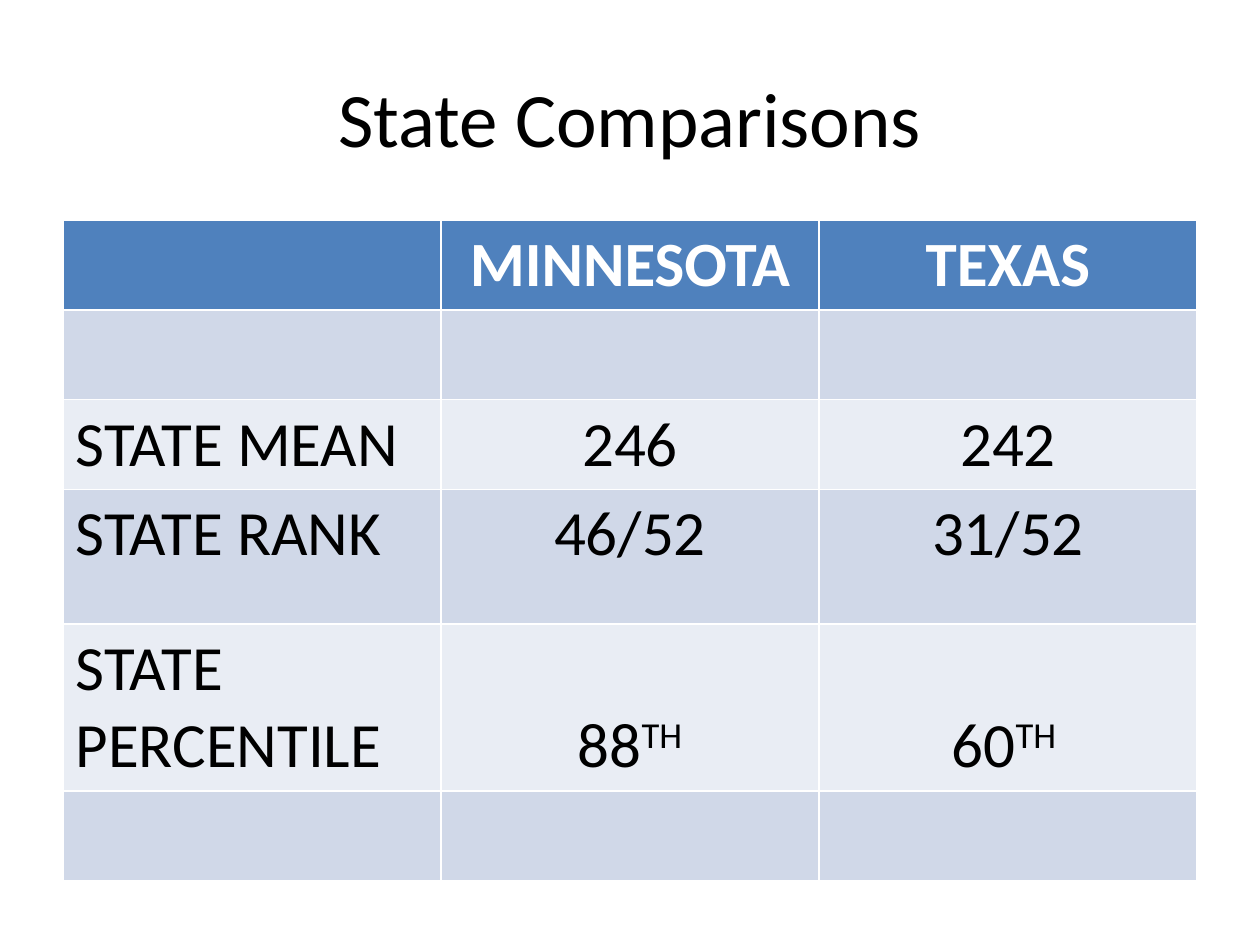
import dataclasses

import pptx
import pptx.dml.color
import pptx.enum.text
import pptx.util

Inches = pptx.util.Inches
Align = pptx.enum.text.PP_ALIGN
Anchor = pptx.enum.text.MSO_ANCHOR


@dataclasses.dataclass(frozen=True)
class Theme:
    font: str = "Calibri"
    text: str = "000000"
    header_text: str = "FFFFFF"
    header_fill: str = "4F81BD"
    bands: tuple = ("E9EDF4", "D0D8E8")
    title_size: int = 44
    table_size: int = 36


theme = Theme()


def add_run(paragraph, text, size, color, bold=False, superscript=False):
    run = paragraph.add_run()
    run.text = text
    run.font.name = theme.font
    run.font.size = pptx.util.Pt(size)
    run.font.bold = bold
    run.font.color.rgb = pptx.dml.color.RGBColor.from_string(color)
    if superscript:
        run._r.get_or_add_rPr().set("baseline", "30000")


presentation = pptx.Presentation()
presentation.slide_width = Inches(10)
presentation.slide_height = Inches(7.5)
slide = presentation.slides.add_slide(presentation.slide_layouts[5])

title = slide.shapes.title
title.left, title.top = Inches(0.5), Inches(0.3)
title.width, title.height = Inches(9), Inches(1.25)
title.text_frame.vertical_anchor = Anchor.MIDDLE
title_paragraph = title.text_frame.paragraphs[0]
title_paragraph.alignment = Align.CENTER
add_run(title_paragraph, "State Comparisons", theme.title_size, theme.text)

rows = [
    (0.71, [[], ["MINNESOTA"], ["TEXAS"]]),
    (0.71, [[], [], []]),
    (0.71, [["STATE MEAN"], ["246"], ["242"]]),
    (1.07, [["STATE RANK"], ["46/52"], ["31/52"]]),
    (1.32, [["STATE PERCENTILE"], ["88", "TH"], ["60", "TH "]]),
    (0.71, [[], [], []]),
]
table_height = sum(height for height, cells in rows)
table = slide.shapes.add_table(
    len(rows), 3, Inches(0.5), Inches(1.75), Inches(9), Inches(table_height)
).table
for column in table.columns:
    column.width = Inches(3)

for row_index, (height, cells) in enumerate(rows):
    table.rows[row_index].height = Inches(height)
    header = row_index == 0
    fill = theme.header_fill if header else theme.bands[row_index % 2]
    color = theme.header_text if header else theme.text
    for column_index, texts in enumerate(cells):
        cell = table.cell(row_index, column_index)
        cell.fill.solid()
        cell.fill.fore_color.rgb = pptx.dml.color.RGBColor.from_string(fill)
        cell.vertical_anchor = Anchor.BOTTOM if len(texts) > 1 else Anchor.TOP
        paragraph = cell.text_frame.paragraphs[0]
        paragraph.alignment = Align.CENTER if column_index else Align.LEFT
        for run_index, text in enumerate(texts):
            add_run(paragraph, text, theme.table_size, color, header, run_index > 0)

presentation.save("out.pptx")
